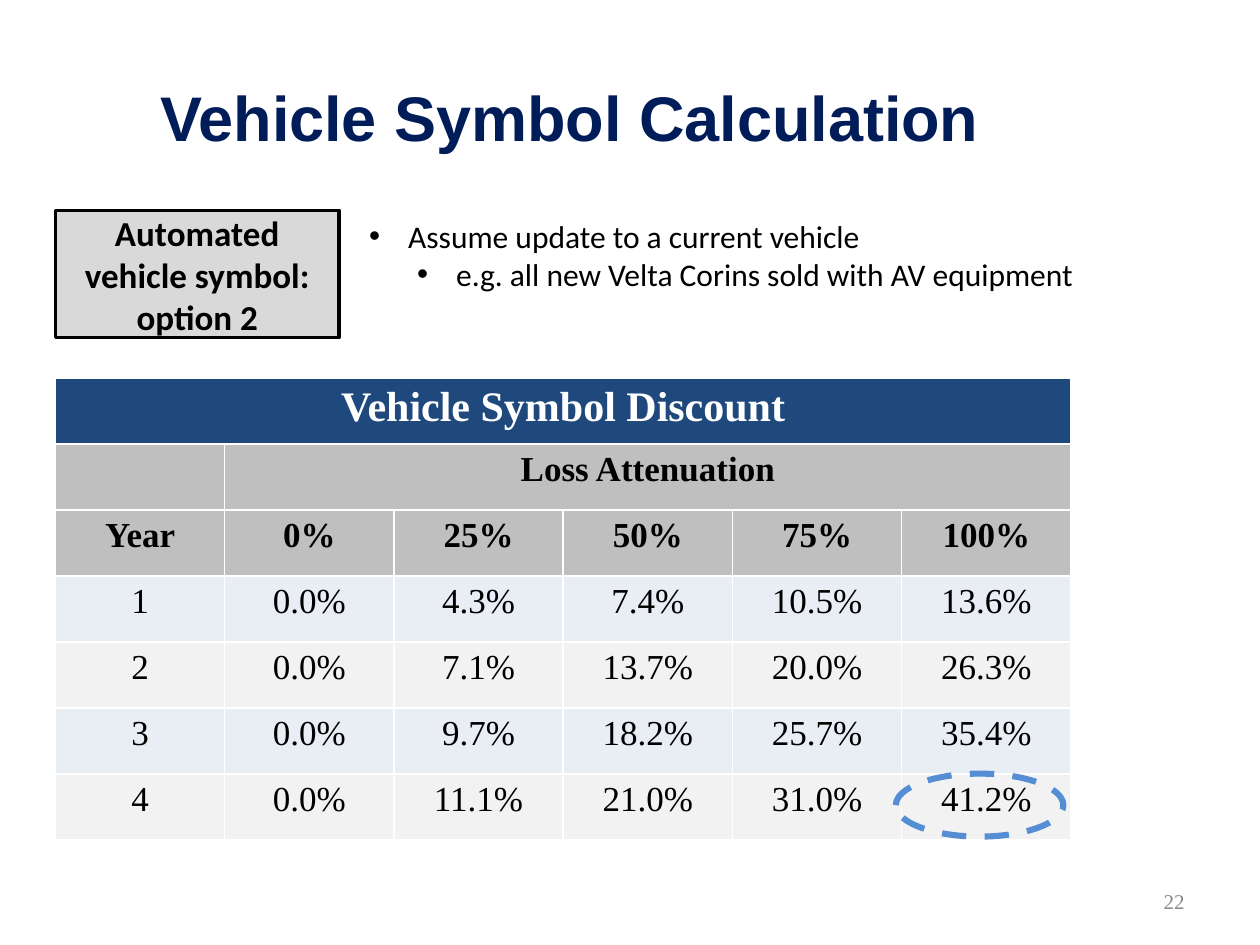
"""Build the vehicle symbol calculation slide."""
import pptx
import pptx.util
import pptx.dml.color
import pptx.enum.dml
import pptx.enum.shapes
import pptx.enum.text
import pptx.oxml
import pptx.oxml.ns

Inches, Pt = pptx.util.Inches, pptx.util.Pt
ALIGN = pptx.enum.text.PP_ALIGN
MIDDLE = pptx.enum.text.MSO_ANCHOR.MIDDLE
SHAPES = pptx.enum.shapes.MSO_SHAPE

COLORS = {
    "title": "001C59", "text": "000000", "page": "898989", "white": "FFFFFF",
    "banner": "1F497D", "header": "BFBFBF", "odd": "E9EDF4", "even": "F2F2F2",
    "option": "D9D9D9", "highlight": "558ED5",
}
TITLE = "Vehicle Symbol Calculation"
OPTION = "Automated vehicle symbol: option 2"
ASSUMPTIONS = [
    (0, "Assume update to a current vehicle"),
    (1, "e.g. all new Velta Corins sold with AV equipment"),
]
PAGE = "22"
BANNER = "Vehicle Symbol Discount"
GROUP = "Loss Attenuation"
HEADINGS = ["Year", "0%", "25%", "50%", "75%", "100%"]
DISCOUNTS = [
    ["1", "0.0%", "4.3%", "7.4%", "10.5%", "13.6%"],
    ["2", "0.0%", "7.1%", "13.7%", "20.0%", "26.3%"],
    ["3", "0.0%", "9.7%", "18.2%", "25.7%", "35.4%"],
    ["4", "0.0%", "11.1%", "21.0%", "31.0%", "41.2%"],
]


def rgb(name):
    return pptx.dml.color.RGBColor.from_string(COLORS[name])


def place(shape, left, top, width, height):
    shape.left, shape.top = Inches(left), Inches(top)
    shape.width, shape.height = Inches(width), Inches(height)


def style(paragraph, size, face, color, bold=False, align=ALIGN.LEFT):
    paragraph.alignment = align
    for run in paragraph.runs:
        font = run.font
        font.size, font.name, font.bold = Pt(size), face, bold
        font.color.rgb = rgb(color)


def add_bullet(paragraph, margin, hanging):
    properties = paragraph._p.get_or_add_pPr()
    properties.set("marL", str(Inches(margin)))
    properties.set("indent", str(-Inches(hanging)))
    for xml in ('<a:buFont %s typeface="Arial"/>', '<a:buChar %s char="•"/>'):
        properties.append(pptx.oxml.parse_xml(xml % pptx.oxml.ns.nsdecls("a")))


def add_borders(cell, color, width):
    properties = cell._tc.get_or_add_tcPr()
    for position, side in enumerate("LRTB"):
        properties.insert(position, pptx.oxml.parse_xml(
            f'<a:ln{side} {pptx.oxml.ns.nsdecls("a")} w="{Pt(width)}"><a:solidFill>'
            f'<a:srgbClr val="{COLORS[color]}"/></a:solidFill></a:ln{side}>'))


def add_discounts(slide):
    rows = [[BANNER] + [""] * 5, ["", GROUP] + [""] * 4, HEADINGS] + DISCOUNTS
    fills = ["banner", "header", "header"] + ["odd", "even"] * 2
    table = slide.shapes.add_table(
        len(rows), len(HEADINGS), Inches(0.44), Inches(3), Inches(8.06), Inches(3.67)).table
    for r, (values, fill) in enumerate(zip(rows, fills)):
        size, color = (24, "white") if fill == "banner" else (20, "text")
        for c, value in enumerate(values):
            cell = table.cell(r, c)
            add_borders(cell, "white", 1)
            cell.fill.solid()
            cell.fill.fore_color.rgb = rgb(fill)
            if value:
                cell.text_frame.text = value
                style(cell.text_frame.paragraphs[0], size, "Times New Roman", color,
                      r < 3, ALIGN.CENTER)
    for r in range(2):
        table.cell(r, r).merge(table.cell(r, len(HEADINGS) - 1))


def add_outlined(slide, kind, box, color, width):
    shape = slide.shapes.add_shape(kind, *map(Inches, box))
    shape.shadow.inherit = False
    shape.line.color.rgb = rgb(color)
    shape.line.width = Pt(width)
    return shape


def main():
    deck = pptx.Presentation()
    deck.slide_width, deck.slide_height = Inches(10), Inches(7.5)
    slide = deck.slides.add_slide(deck.slide_layouts[1])

    title, assumptions = slide.placeholders
    place(title, 1.17, 0.3, 8.83, 1.25)
    title.text_frame.text = TITLE
    title.text_frame.vertical_anchor = MIDDLE
    style(title.text_frame.paragraphs[0], 36, "Arial", "title", True)

    page = slide.shapes.add_textbox(Inches(7.17), Inches(6.95), Inches(2.33), Inches(0.4))
    page.text_frame.word_wrap = True
    page.text_frame.vertical_anchor = MIDDLE
    page.text_frame.text = PAGE
    style(page.text_frame.paragraphs[0], 12, "Times New Roman", "page", align=ALIGN.RIGHT)

    add_discounts(slide)

    option = add_outlined(slide, SHAPES.RECTANGLE, (0.44, 1.67, 2.25, 1.01), "text", 2)
    option.fill.solid()
    option.fill.fore_color.rgb = rgb("option")
    option.text_frame.text = OPTION
    option.text_frame.word_wrap = True
    option.text_frame.vertical_anchor = MIDDLE
    style(option.text_frame.paragraphs[0], 20, "Calibri", "text", True, ALIGN.CENTER)

    place(assumptions, 2.83, 1.67, 6.75, 0.71)
    assumptions.text_frame.text = "\n".join(text for _, text in ASSUMPTIONS)
    assumptions.text_frame.auto_size = pptx.enum.text.MSO_AUTO_SIZE.SHAPE_TO_FIT_TEXT
    for paragraph, (level, _) in zip(assumptions.text_frame.paragraphs, ASSUMPTIONS):
        paragraph.level = level
        add_bullet(paragraph, 0.31 + 0.38 * level, 0.31)
        paragraph.space_before = Pt(0)
        style(paragraph, 18, "Calibri", "text")

    highlight = add_outlined(slide, SHAPES.OVAL, (7.11, 6.14, 1.33, 0.5), "highlight", 3.5)
    highlight.fill.background()
    highlight.line.dash_style = pptx.enum.dml.MSO_LINE.DASH

    deck.save("out.pptx")


if __name__ == "__main__":
    main()
